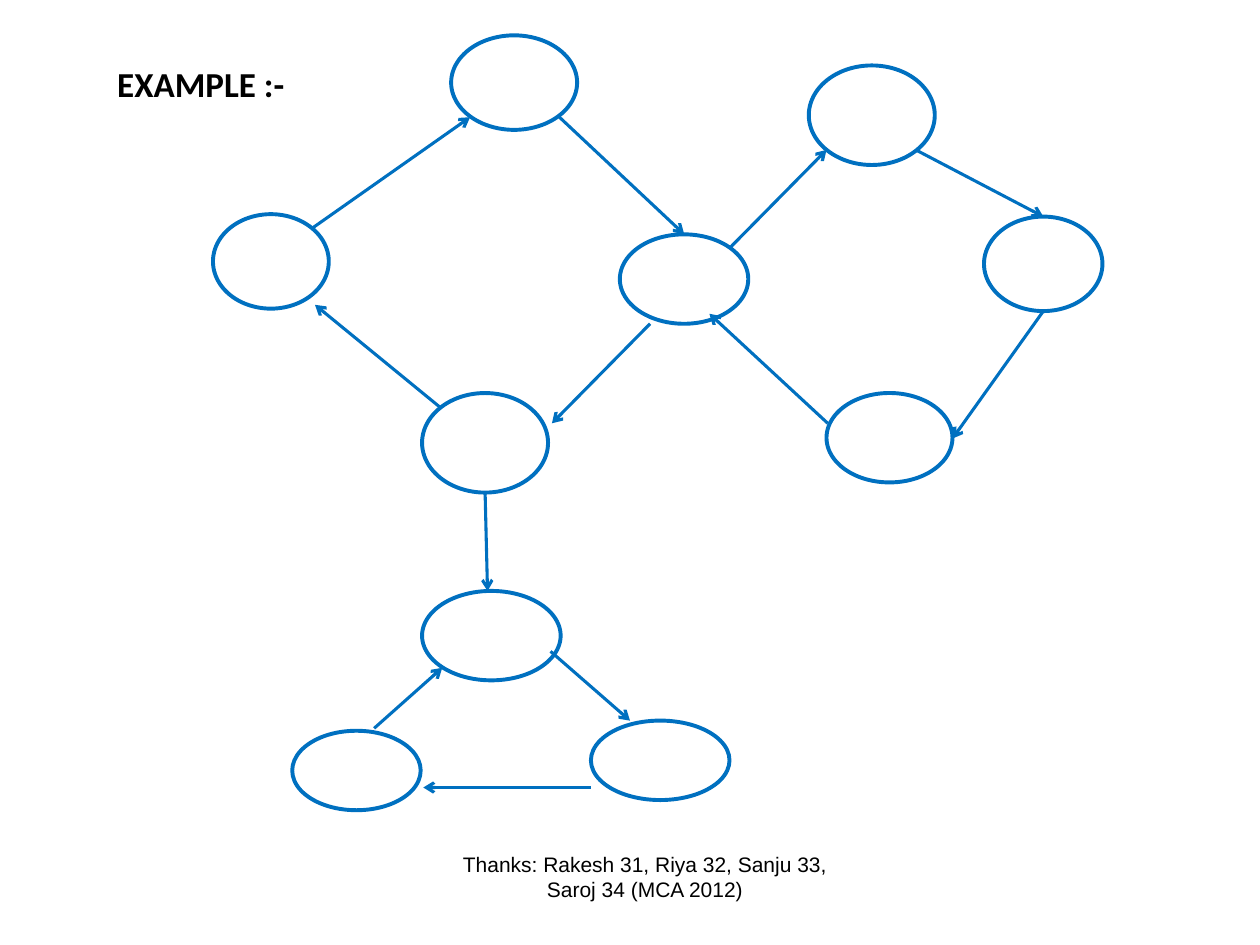
from lxml import etree
from pptx import Presentation
from pptx.dml.color import RGBColor
from pptx.enum.shapes import MSO_CONNECTOR, MSO_SHAPE
from pptx.enum.text import MSO_ANCHOR, PP_ALIGN
from pptx.oxml.ns import qn
from pptx.util import Pt

STRAIGHT = MSO_CONNECTOR.STRAIGHT
ELLIPSE = MSO_SHAPE.OVAL
MIDDLE, BOTTOM = MSO_ANCHOR.MIDDLE, MSO_ANCHOR.BOTTOM
CENTER = PP_ALIGN.CENTER
BLUE = RGBColor(0x00, 0x70, 0xC0)
WHITE = RGBColor(0xFF, 0xFF, 0xFF)
BLACK = RGBColor(0x00, 0x00, 0x00)


def write_text(box, text, size, font, bold=False, anchor=MIDDLE):
    frame = box.text_frame
    frame.word_wrap = True
    frame.vertical_anchor = anchor
    para = frame.paragraphs[0]
    para.alignment = CENTER
    span = para.add_run()
    span.text = text
    span.font.size = Pt(size)
    span.font.name = font
    span.font.bold = bold
    span.font.color.rgb = BLACK


deck = Presentation()
deck.slide_width, deck.slide_height = Pt(720), Pt(540)
page = deck.slides.add_slide(deck.slide_layouts[5])
page.background.fill.solid()
page.background.fill.fore_color.rgb = WHITE

title = page.shapes.title
title.left, title.top, title.width, title.height = Pt(44.6), Pt(22.3), Pt(140.4), Pt(50.4)
title.fill.solid()
title.fill.fore_color.rgb = WHITE
title.line.color.rgb = WHITE
title.line.width = Pt(2)
write_text(title, "EXAMPLE :-", 20, "Calibri", bold=True)

nodes = [
    (257.8, 20.2, 72, 54),
    (121.7, 122.4, 66.2, 54),
    (354.2, 133.9, 73.4, 51.1),
    (241.2, 224.6, 72, 56.9),
    (241.2, 337.7, 79.2, 51.1),
    (337.7, 411.8, 79.2, 45.4),
    (167, 417.6, 73.4, 45.4),
    (462.2, 37.4, 72, 56.9),
    (562.3, 123.8, 67.7, 54),
    (472.3, 224.6, 72, 51.1),
]
for left, top, width, height in nodes:
    node = page.shapes.add_shape(ELLIPSE, Pt(left), Pt(top), Pt(width), Pt(height))
    node.shadow.inherit = False
    node.fill.solid()
    node.fill.fore_color.rgb = WHITE
    node.line.color.rgb = BLUE
    node.line.width = Pt(2.25)

arrows = [
    (178.6, 130.3, 268.6, 67),
    (251.3, 232.6, 180, 174.2),
    (319.7, 67, 391, 133.9),
    (371.5, 185, 315.4, 241.9),
    (417.6, 141.1, 472.3, 85.7),
    (523.4, 85.7, 596.2, 123.8),
    (596.2, 177.8, 544.3, 250.6),
    (473, 241.9, 405.4, 179.3),
    (277.2, 281.5, 278.6, 337.7),
    (213.8, 416.2, 252.7, 381.6),
    (314.6, 372.2, 360, 411.8),
    (337.7, 450, 241.9, 450),
]
for ends in arrows:
    arrow = page.shapes.add_connector(STRAIGHT, *map(Pt, ends))
    arrow.line.color.rgb = BLUE
    arrow.line.width = Pt(1.75)
    etree.SubElement(arrow.line._get_or_add_ln(), qn("a:tailEnd"), type="arrow")
    etree.SubElement(arrow._element.spPr, qn("a:effectLst"))

footer = page.shapes.add_textbox(Pt(253.4), Pt(496.8), Pt(230.4), Pt(43.2))
footer.text_frame.margin_top = 0
footer.text_frame.margin_bottom = Pt(24.5)
write_text(footer, "Thanks: Rakesh 31, Riya 32, Sanju 33, Saroj 34 (MCA 2012)", 12, "Arial", anchor=BOTTOM)

deck.save("out.pptx")
